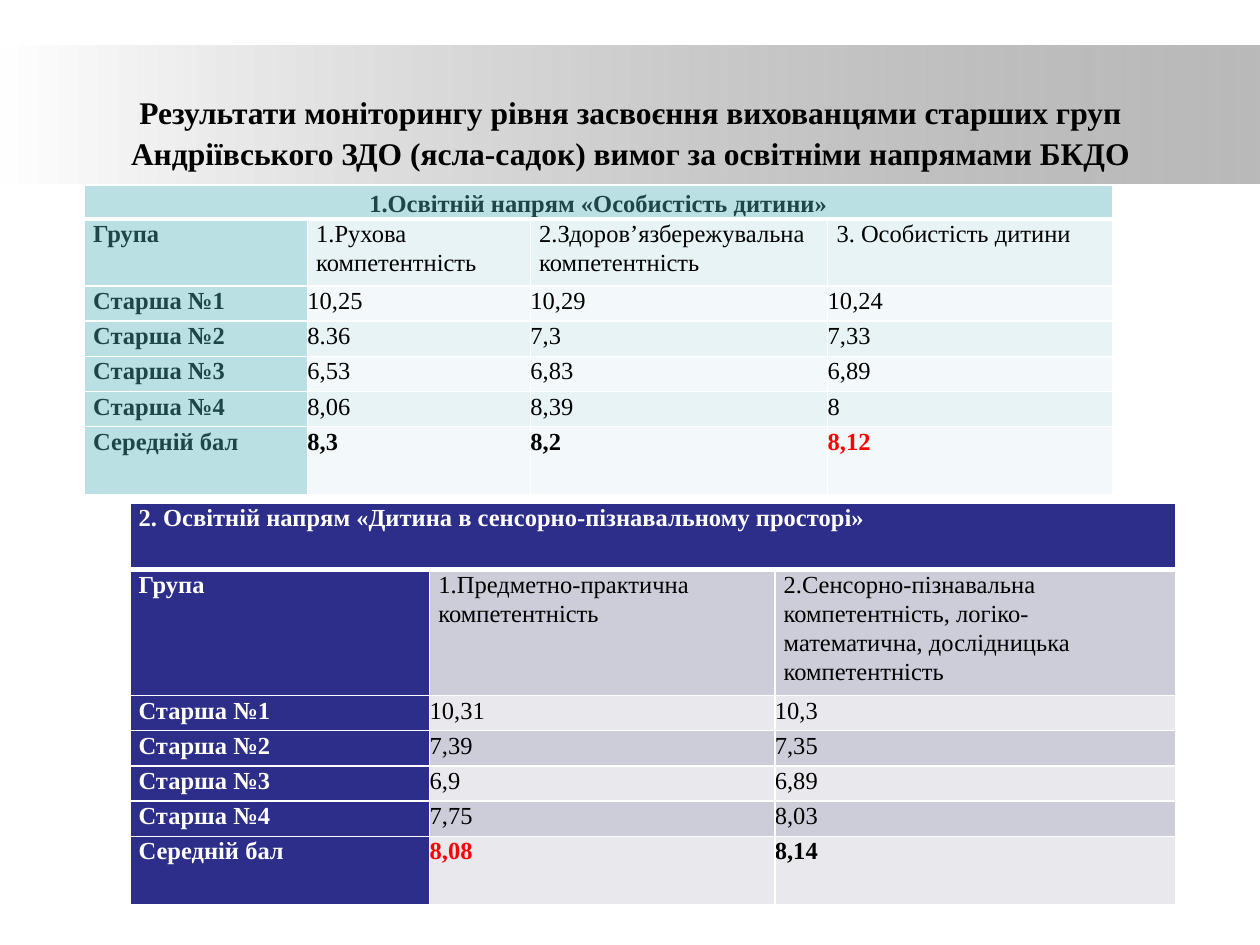
from dataclasses import dataclass

from lxml.etree import SubElement
from pptx import Presentation
from pptx.dml.color import RGBColor
from pptx.enum.shapes import MSO_SHAPE as Shape
from pptx.enum.text import MSO_ANCHOR as Anchor, PP_ALIGN as Align
from pptx.oxml import parse_xml
from pptx.oxml.ns import nsdecls, qn
from pptx.util import Emu, Inches, Pt

FONT = "Times New Roman"
COLOURS = {
    "white": "FFFFFF", "black": "000000", "red": "FF0000", "grey": "808080",
    "teal": "BBE0E3", "teal text": "1E4649", "teal dark band": "E7F3F4", "teal light band": "F3F9FA",
    "navy": "2D2D8A", "navy dark band": "CDCDDA", "navy light band": "E8E8ED",
}
WIDTH, HEIGHT = Inches(10), Inches(7.5)
SIDE_INSET = Inches(0.07)


@dataclass(frozen=True)
class ScoreTable:
    """One direction of learning; lengths are percent of the slide's width or height."""
    left: float
    top: float
    columns: list[float]
    title_height: float
    title: str
    title_centred: bool
    skills: list[str]
    scores: list[list[str]]
    best: int
    theme: str
    label_colour: str


GROUPS = ["Старша №1", "Старша №2", "Старша №3", "Старша №4", "Середній бал"]
ROW_HEIGHTS = [7.07, 3.73, 3.73, 3.73, 3.73, 7.2]

TABLES = [
    ScoreTable(
        6.7, 19.6, [17.7, 17.7, 23.6, 22.6], 3.33,
        "1.Освітній напрям «Особистість дитини»", True,
        ["1.Рухова компетентність", "2.Здоров’язбережувальна компетентність", "3. Особистість дитини"],
        [["10,25", "10,29", "10,24"], ["8.36", "7,3", "7,33"], ["6,53", "6,83", "6,89"],
         ["8,06", "8,39", "8"], ["8,3", "8,2", "8,12"]],
        3, "teal", "teal text"),
    ScoreTable(
        10.3, 53.2, [23.8, 27.4, 31.8], 7.07,
        "2. Освітній напрям «Дитина в сенсорно-пізнавальному просторі»", False,
        ["1.Предметно-практична компетентність",
         "2.Сенсорно-пізнавальна компетентність, логіко-математична, дослідницька компетентність"],
        [["10,31", "10,3"], ["7,39", "7,35"], ["6,9", "6,89"], ["7,75", "8,03"], ["8,08", "8,14"]],
        1, "navy", "white"),
]


def colour(name: str) -> RGBColor:
    return RGBColor.from_string(COLOURS[name])


def across(percent: float) -> Emu:
    return Emu(round(WIDTH * percent / 100))


def down(percent: float) -> Emu:
    return Emu(round(HEIGHT * percent / 100))


def write(frame, text: str, size: int, ink: str, bold: bool, align=Align.LEFT,
          spacing: float = 1.07, after: int = 8) -> None:
    para = frame.paragraphs[0]
    para.text = text
    para.alignment, para.line_spacing, para.space_after = align, spacing, Pt(after)
    para.font.name, para.font.size, para.font.bold = FONT, Pt(size), bold
    para.font.color.rgb = colour(ink)


def add_band(page) -> None:
    """Grey strip fading in from the left behind the heading."""
    band = page.shapes.add_shape(Shape.RECTANGLE, 0, down(4.8), WIDTH, down(14.67))
    band.shadow.inherit = False
    band.line.fill.background()
    band.fill.gradient()
    band.fill.gradient_angle = 0
    start, end = band.fill.gradient_stops
    start.position, end.position = 0, 1
    start.color.rgb, end.color.rgb = colour("white"), colour("grey")
    grey = band._element.spPr.findall(".//" + qn("a:srgbClr"))[-1]
    SubElement(grey, qn("a:alpha"), val="54000")


def add_heading(page, text: str) -> None:
    box = page.shapes.add_textbox(across(5.3), down(6.53), across(89.5), down(14.67))
    box.text_frame.word_wrap = True
    box.text_frame.vertical_anchor = Anchor.MIDDLE
    write(box.text_frame, text, 18, "black", True, Align.CENTER)


def set_borders(cell, top: int, bottom: int) -> None:
    widths = {"L": 1, "R": 1, "T": top, "B": bottom}
    properties = cell._tc.get_or_add_tcPr()
    for index, (side, points) in enumerate(widths.items()):
        properties.insert(index, parse_xml(
            f'<a:ln{side} {nsdecls("a")} w="{Pt(points)}"><a:solidFill>'
            f'<a:srgbClr val="{COLOURS["white"]}"/></a:solidFill></a:ln{side}>'))


def add_score_table(page, data: ScoreTable) -> None:
    heights = [data.title_height, *ROW_HEIGHTS]
    rows = [[data.title] + [""] * len(data.skills), ["Група", *data.skills]]
    rows += [[group, *scores] for group, scores in zip(GROUPS, data.scores)]
    table = page.shapes.add_table(
        len(rows), len(data.columns), across(data.left), down(data.top),
        across(sum(data.columns)), down(sum(heights))).table
    table.first_row = table.horz_banding = False
    for column, share in zip(table.columns, data.columns):
        column.width = across(share)
    for row, share in zip(table.rows, heights):
        row.height = down(share)
    table.cell(0, 0).merge(table.cell(0, len(data.columns) - 1))

    last = len(rows) - 1
    for r, texts in enumerate(rows):
        for c, text in enumerate(texts):
            cell = table.cell(r, c)
            is_label = r == 0 or c == 0
            is_score = r > 1 and c > 0
            cell.margin_left = cell.margin_right = 0 if is_score else SIDE_INSET
            cell.margin_top = cell.margin_bottom = 0
            cell.fill.solid()
            band = "dark band" if r % 2 else "light band"
            cell.fill.fore_color.rgb = colour(data.theme if is_label else f"{data.theme} {band}")
            set_borders(cell, 3 if r == 1 else 1, 3 if r == 0 else 1)
            if not text:
                continue
            ink = data.label_colour if is_label else "black"
            if r == last and c == data.best:
                ink = "red"
            centred = r == 0 and data.title_centred
            if centred:
                cell.vertical_anchor = Anchor.MIDDLE
            write(cell.text_frame, text, 14, ink, is_label or r == last,
                  Align.CENTER if centred else Align.LEFT,
                  1.15 if centred else 1.07, 0 if is_score else 8)


def main() -> None:
    deck = Presentation()
    deck.slide_width, deck.slide_height = WIDTH, HEIGHT
    page = deck.slides.add_slide(deck.slide_layouts[6])
    add_band(page)
    add_heading(page, "Результати моніторингу рівня засвоєння вихованцями старших груп "
                      "Андріївського ЗДО (ясла-садок) вимог за освітніми напрямами БКДО")
    for data in TABLES:
        add_score_table(page, data)
    deck.save("out.pptx")


if __name__ == "__main__":
    main()
